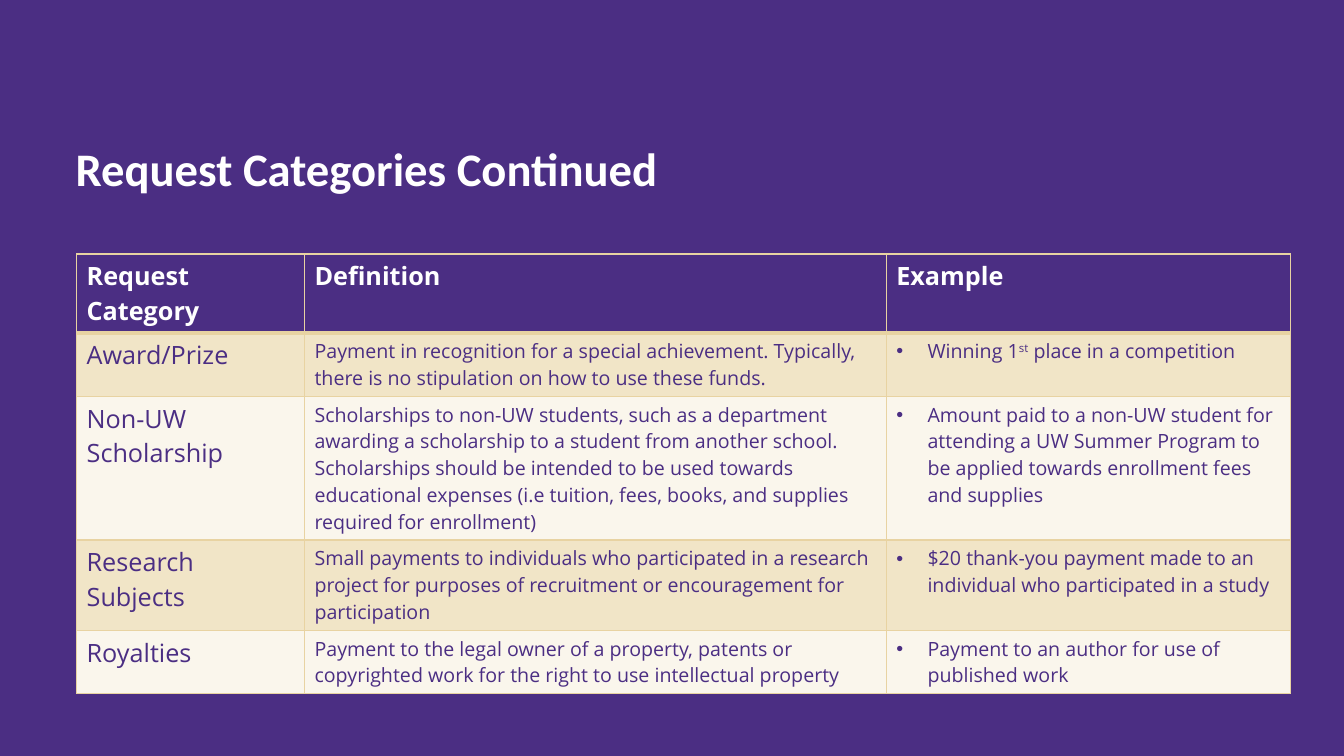
from lxml import etree
from pptx import Presentation
from pptx.dml.color import RGBColor
from pptx.enum.text import MSO_ANCHOR, MSO_AUTO_SIZE, PP_ALIGN
from pptx.oxml.ns import qn
from pptx.util import Inches, Pt

LEFT, BOTTOM, FIXED = PP_ALIGN.LEFT, MSO_ANCHOR.BOTTOM, MSO_AUTO_SIZE.NONE

THEME = {
    "purple": "4B2E83", "gold": "E8D3A2", "white": "FFFFFF",
    "bands": ("F1E5C7", "FAF6EC"),
    "title": {"name": "Calibri", "size": Pt(33.3), "bold": True},
    "head": {"name": "Open Sans", "size": Pt(18), "bold": True},
    "label": {"name": "Open Sans", "size": Pt(18), "bold": False},
    "body": {"name": "Open Sans", "size": Pt(14), "bold": False},
    "thin": 1, "thick": 3, "indent": 0.31,
}

TITLE_BOX = (0.65, 0.54, 11.95, 1.45)
TABLE_BOX = (0.76, 2.52, 12.04, 2.85)
COLS = (2.26, 5.77, 4.01)
HEAD_ROW, BODY_ROW = 0.37, 0.62

HEADS = ("Request Category", "Definition", "Example")
# A tuple in the last column holds text, superscript, text.
ROWS = (
    ("Award/Prize",
     "Payment in recognition for a special achievement. Typically, there is "
     "no stipulation on how to use these funds.",
     ("Winning 1", "st", " place in a competition")),
    ("Non-UW Scholarship",
     "Scholarships to non-UW students, such as a department awarding a "
     "scholarship to a student from another school. Scholarships should be "
     "intended to be used towards educational expenses (i.e tuition, fees, "
     "books, and supplies required for enrollment)",
     ("Amount paid to a non-UW student for attending a UW Summer Program to "
      "be applied towards enrollment fees and supplies",)),
    ("Research Subjects",
     "Small payments to individuals who participated in a research project "
     "for purposes of recruitment or encouragement for participation",
     ("$20 thank-you payment made to an individual who participated in a "
      "study",)),
    ("Royalties",
     "Payment to the legal owner of a property, patents or copyrighted work "
     "for the right to use intellectual property",
     ("Payment to an author for use of published work",)),
)


def paint(fill, color):
    fill.solid()
    fill.fore_color.rgb = RGBColor.from_string(color)


def write(para, parts, style, color):
    """Add the parts as runs, every second one raised."""
    for i, part in enumerate(parts):
        run = para.add_run()
        run.text = part
        for key, value in THEME[style].items():
            setattr(run.font, key, value)
        run.font.color.rgb = RGBColor.from_string(color)
        if i % 2:
            run.font._element.set("baseline", "30000")


def bullet(para):
    props = para._p.get_or_add_pPr()
    gap = Inches(THEME["indent"])
    props.set("marL", str(gap))
    props.set("indent", str(-gap))
    etree.SubElement(props, qn("a:buFont")).set("typeface", "Arial")
    etree.SubElement(props, qn("a:buChar")).set("char", "•")


def border(cell, top, bottom):
    props = cell._tc.get_or_add_tcPr()
    widths = {"L": THEME["thin"], "R": THEME["thin"], "T": top, "B": bottom}
    for side, width in widths.items():
        line = etree.SubElement(props, qn("a:ln" + side), w=str(Pt(width)))
        fill = etree.SubElement(line, qn("a:solidFill"))
        etree.SubElement(fill, qn("a:srgbClr"), val=THEME["gold"])


def add_title(slide, box, text):
    title = slide.shapes.title
    for key, value in zip(("left", "top", "width", "height"), box):
        setattr(title, key, Inches(value))
    frame = title.text_frame
    form = {"word_wrap": True, "auto_size": FIXED, "vertical_anchor": BOTTOM}
    for key, value in form.items():
        setattr(frame, key, value)
    para = frame.paragraphs[0]
    para.alignment = LEFT
    write(para, (text,), "title", THEME["white"])


def add_grid(slide, box, heads, rows):
    place = [Inches(v) for v in box]
    grid = slide.shapes.add_table(len(rows) + 1, len(heads), *place).table
    grid.first_row = True
    grid.horz_banding = False
    for col, width in zip(grid.columns, COLS):
        col.width = Inches(width)
    thin, thick = THEME["thin"], THEME["thick"]
    for r, texts in enumerate((heads, *rows)):
        grid.rows[r].height = Inches(BODY_ROW if r else HEAD_ROW)
        shade = THEME["bands"][(r - 1) % 2] if r else THEME["purple"]
        color = THEME["purple"] if r else THEME["white"]
        for c, text in enumerate(texts):
            cell = grid.cell(r, c)
            border(cell, thick if r == 1 else thin, thin if r else thick)
            paint(cell.fill, shade)
            para = cell.text_frame.paragraphs[0]
            if r and c == 2:
                bullet(para)
            style = ("label" if c == 0 else "body") if r else "head"
            parts = (text,) if isinstance(text, str) else text
            write(para, parts, style, color)


def main():
    deck = Presentation()
    deck.slide_width, deck.slide_height = Inches(13.33), Inches(7.5)
    slide = deck.slides.add_slide(deck.slide_layouts[5])
    paint(slide.background.fill, THEME["purple"])
    add_title(slide, TITLE_BOX, "Request Categories Continued")
    add_grid(slide, TABLE_BOX, HEADS, ROWS)
    deck.save("out.pptx")


if __name__ == "__main__":
    main()
